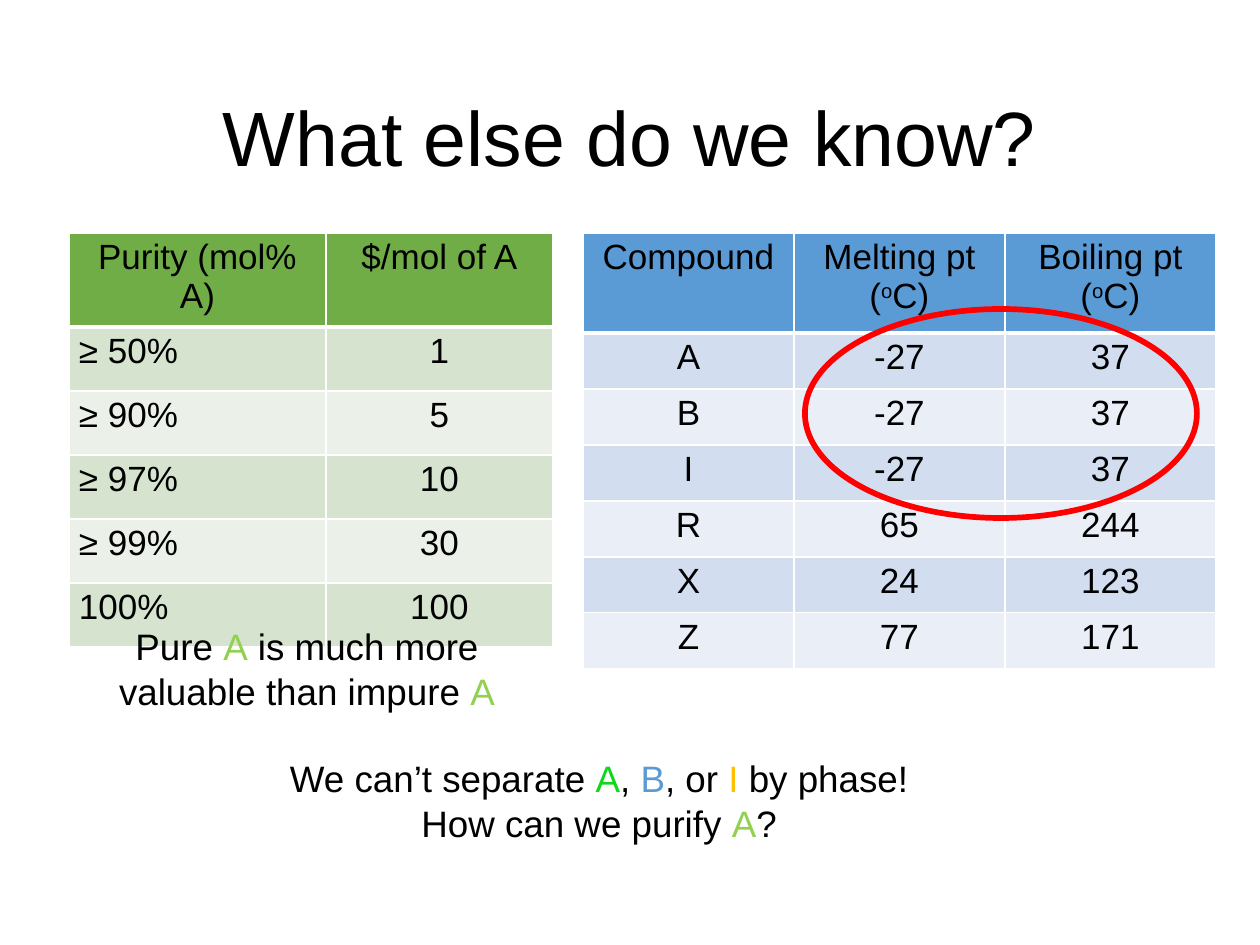
from dataclasses import dataclass

from lxml.etree import SubElement
from pptx import Presentation
from pptx.dml.color import RGBColor
from pptx.enum.shapes import MSO_SHAPE
from pptx.enum.text import MSO_ANCHOR, PP_ALIGN
from pptx.oxml.ns import qn
from pptx.util import Emu, Pt

SCALE = 914400 // 126
BLACK, WHITE, RED = "000000", "FFFFFF", "FF0000"
GREEN, BRIGHT, BLUE, GOLD = "92D050", "0FD719", "5B9BD5", "FFC000"


@dataclass(frozen=True)
class Box:
    left: int
    top: int
    width: int
    height: int


@dataclass(frozen=True)
class Span:
    text: str
    color: str = BLACK
    raised: bool = False


@dataclass(frozen=True)
class Grid:
    left: int
    top: int
    cols: list[int]
    head: int
    row: int
    inset: int
    fills: tuple[str, str, str]
    first: PP_ALIGN
    cells: list[list]


@dataclass(frozen=True)
class Note:
    box: Box
    size: int
    lines: list[list[Span]]
    anchor: MSO_ANCHOR = MSO_ANCHOR.TOP
    spacing: float = 1.0


def px(count: int) -> Emu:
    return Emu(count * SCALE)


def place(box: Box) -> list[Emu]:
    return [px(n) for n in (box.left, box.top, box.width, box.height)]


def rgb(code: str) -> RGBColor:
    return RGBColor.from_string(code)


def write(para, spans: list[Span], size: int, align: PP_ALIGN) -> None:
    para.alignment = align
    para.font.name, para.font.size = "Arial", Pt(size)
    para.font.color.rgb = rgb(BLACK)
    for span in spans:
        run = para.add_run()
        run.text = span.text
        if span.color != BLACK:
            run.font.color.rgb = rgb(span.color)
        if span.raised:
            run.font._element.set("baseline", "30000")


def edge(cell, side: str, points: int) -> None:
    props = cell._tc.get_or_add_tcPr()
    line = SubElement(props, qn(f"a:ln{side}"), w=str(Pt(points)))
    fill = SubElement(line, qn("a:solidFill"))
    SubElement(fill, qn("a:srgbClr"), val=WHITE)


def draw_grid(slide, grid: Grid) -> None:
    count = len(grid.cells)
    heights = [grid.head] + [grid.row] * (count - 1)
    box = Box(grid.left, grid.top, sum(grid.cols), sum(heights))
    table = slide.shapes.add_table(count, len(grid.cols), *place(box)).table
    table.first_row = table.horz_banding = False
    for col, width in zip(table.columns, grid.cols):
        col.width = px(width)
    for r, (row, height) in enumerate(zip(table.rows, heights)):
        row.height = px(height)
        shade = grid.fills[0] if r == 0 else grid.fills[2 - r % 2]
        for c, (cell, value) in enumerate(zip(row.cells, grid.cells[r])):
            for side in "LRTB":
                thick = (r, side) in ((0, "B"), (1, "T"))
                edge(cell, side, 3 if thick else 1)
            cell.fill.solid()
            cell.fill.fore_color.rgb = rgb(shade)
            cell.margin_left = cell.margin_right = px(grid.inset)
            cell.margin_top = cell.margin_bottom = px(5)
            spans = [Span(value)] if isinstance(value, str) else value
            align = grid.first if r and c == 0 else PP_ALIGN.CENTER
            write(cell.text_frame.paragraphs[0], spans, 20, align)


def draw_note(slide, note: Note) -> None:
    frame = slide.shapes.add_textbox(*place(note.box)).text_frame
    frame.word_wrap = True
    frame.vertical_anchor = note.anchor
    for i, spans in enumerate(note.lines):
        para = frame.add_paragraph() if i else frame.paragraphs[0]
        para.line_spacing = note.spacing
        write(para, spans, note.size, PP_ALIGN.CENTER)


def draw_ring(slide, box: Box) -> None:
    ring = slide.shapes.add_shape(MSO_SHAPE.OVAL, *place(box))
    ring.shadow.inherit = False
    ring.fill.background()
    ring.line.color.rgb = rgb(RED)
    ring.line.width = Pt(3.25)


def degrees(label: str) -> list[Span]:
    return [Span(f"{label} ("), Span("o", raised=True), Span("C)")]


TITLE = Note(Box(87, 50, 1086, 183), 44, [[Span("What else do we know?")]],
             MSO_ANCHOR.MIDDLE, 0.9)
PRICES = Grid(69, 233, [257, 227], 67, 64, 10,
              ("70AD47", "D5E3CF", "EBF1E9"), PP_ALIGN.LEFT, [
                  ["Purity (mol% A)", "$/mol of A"],
                  ["≥ 50%", "1"],
                  ["≥ 90%", "5"],
                  ["≥ 97%", "10"],
                  ["≥ 99%", "30"],
                  ["100%", "100"]])
POINTS = Grid(583, 233, [211] * 3, 100, 56, 9,
              (BLUE, "D2DEEF", "EAEFF7"), PP_ALIGN.CENTER, [
                  ["Compound", degrees("Melting pt"), degrees("Boiling pt")],
                  ["A", "-27", "37"],
                  ["B", "-27", "37"],
                  ["I", "-27", "37"],
                  ["R", "65", "244"],
                  ["X", "24", "123"],
                  ["Z", "77", "171"]])
RING = Box(805, 309, 392, 209)
PHASE = Note(Box(149, 750, 900, 102), 21, [
    [Span("We can’t separate "), Span("A", BRIGHT), Span(", "),
     Span("B", BLUE), Span(", or "), Span("I", GOLD), Span(" by phase!")],
    [Span("How can we purify "), Span("A", GREEN), Span("?")]])
VALUE = Note(Box(87, 618, 440, 102), 21, [
    [Span("Pure "), Span("A", GREEN),
     Span(" is much more valuable than impure "), Span("A", GREEN)]])


def main() -> None:
    """Build the slide of purity prices and phase points."""
    deck = Presentation()
    deck.slide_width, deck.slide_height = px(1260), px(945)
    slide = deck.slides.add_slide(deck.slide_layouts[6])
    draw_note(slide, TITLE)
    for grid in (PRICES, POINTS):
        draw_grid(slide, grid)
    draw_ring(slide, RING)
    for note in (PHASE, VALUE):
        draw_note(slide, note)
    deck.save("out.pptx")


if __name__ == "__main__":
    main()
